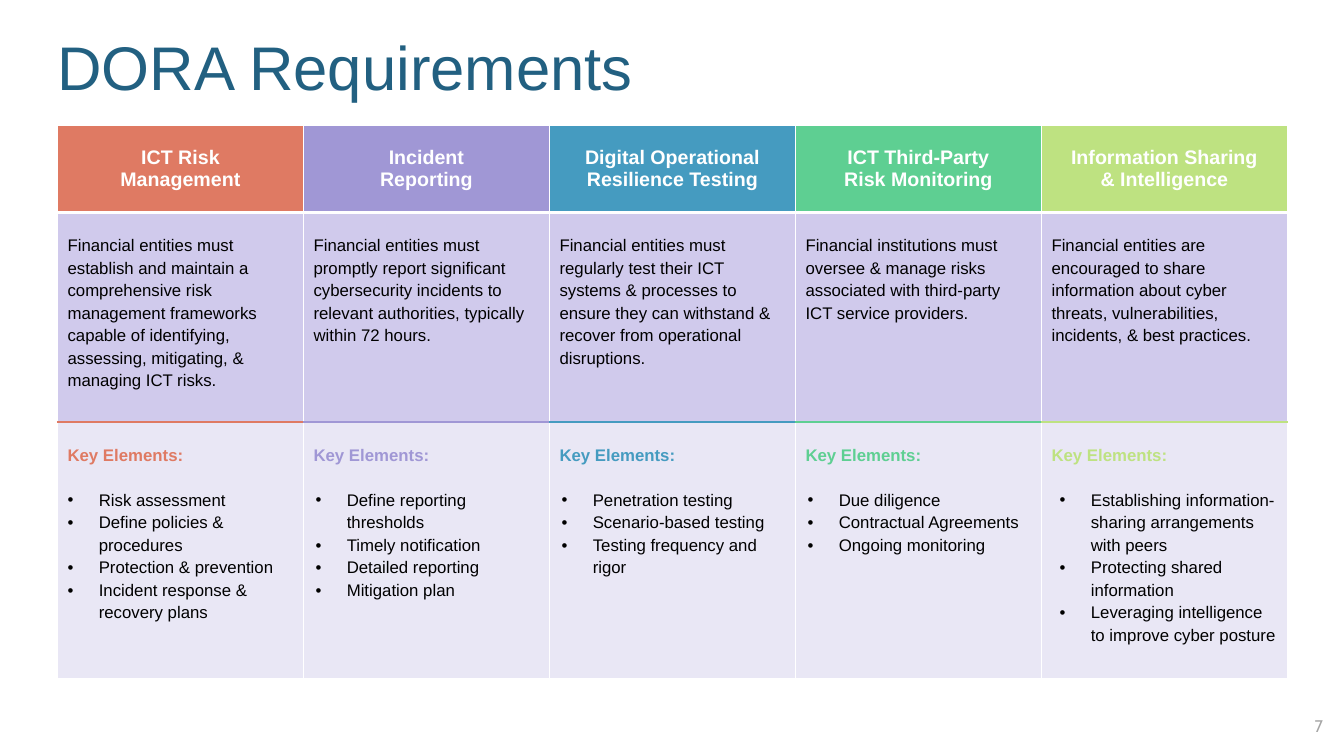
from dataclasses import dataclass

from lxml.etree import SubElement
from pptx import Presentation
from pptx.dml.color import RGBColor
from pptx.enum.text import MSO_ANCHOR, MSO_AUTO_SIZE, PP_ALIGN
from pptx.oxml import parse_xml
from pptx.oxml.ns import nsdecls, qn
from pptx.util import Inches, Pt


@dataclass(frozen=True)
class Theme:
    font: str = "Arial"
    number_font: str = "Cabin"
    title: str = "226081"
    number: str = "A5A5A5"
    white: str = "FFFFFF"
    black: str = "000000"
    summary_fill: str = "D0CAEC"
    elements_fill: str = "E9E7F5"
    title_size: int = 44
    header_size: int = 14
    body_size: int = 12


theme = Theme()

# header lines, colour, summary, bullet indent, key elements
pillars = [
    (["ICT Risk", "Management"], "DF7A63",
     "Financial entities must establish and maintain a comprehensive risk management "
     "frameworks capable of identifying, assessing, mitigating, & managing ICT risks.",
     0.31, ["Risk assessment", "Define policies & procedures",
            "Protection & prevention", "Incident response & recovery plans"]),
    (["Incident", "Reporting"], "A097D5",
     "Financial entities must promptly report significant cybersecurity incidents to "
     "relevant authorities, typically within 72 hours.",
     0.33, ["Define reporting thresholds", "Timely notification",
            "Detailed reporting", "Mitigation plan"]),
    (["Digital Operational Resilience Testing"], "459BC0",
     "Financial entities must regularly test their ICT systems & processes to ensure "
     "they can withstand & recover from operational disruptions.",
     0.33, ["Penetration testing", "Scenario-based testing", "Testing frequency and rigor"]),
    (["ICT Third-Party", "Risk Monitoring"], "5ECF92",
     "Financial institutions must oversee & manage risks associated with third-party "
     "ICT service providers.",
     0.33, ["Due diligence", "Contractual Agreements", "Ongoing monitoring"]),
    (["Information Sharing", "& Intelligence"], "BEE281",
     "Financial entities are encouraged to share information about cyber threats, "
     "vulnerabilities, incidents, & best practices.",
     0.39, ["Establishing information-sharing arrangements with peers",
            "Protecting shared information",
            "Leveraging intelligence to improve cyber posture"]),
]


def write(frame, text, size, color, bold=False, font=theme.font):
    """Add one paragraph, reusing the empty first one, and return it."""
    para = frame.paragraphs[0]
    if para.runs:
        para = frame.add_paragraph()
    span = para.add_run()
    span.text = text
    span.font.name = font
    span.font.size = Pt(size)
    span.font.bold = bold
    span.font.color.rgb = RGBColor.from_string(color)
    return para


def style_cell(cell, fill, top, bottom):
    """Fill the cell and draw its borders; top and bottom are (colour, points)."""
    cell.margin_left = cell.margin_right = Inches(0.1)
    cell.margin_top = cell.margin_bottom = Inches(0.2)
    cell.fill.solid()
    cell.fill.fore_color.rgb = RGBColor.from_string(fill)
    side = (theme.white, 1)
    borders = {"lnL": side, "lnR": side, "lnT": top, "lnB": bottom}
    for position, (tag, (color, points)) in enumerate(borders.items()):
        line = parse_xml(
            f'<a:{tag} {nsdecls("a")} w="{Pt(points)}"><a:solidFill>'
            f'<a:srgbClr val="{color}"/></a:solidFill></a:{tag}>')
        cell._tc.get_or_add_tcPr().insert(position, line)


deck = Presentation()
deck.slide_width, deck.slide_height = Inches(13.33), Inches(7.5)
page = deck.slides.add_slide(deck.slide_layouts[5])

title = page.shapes.title
title.left, title.top = Inches(0.47), Inches(0.17)
title.width, title.height = Inches(11.5), Inches(0.97)
title.text_frame.auto_size = MSO_AUTO_SIZE.NONE
title.text_frame.vertical_anchor = MSO_ANCHOR.MIDDLE
write(title.text_frame, "DORA Requirements", theme.title_size, theme.title).alignment = PP_ALIGN.LEFT

number = page.shapes.add_textbox(Inches(12.53), Inches(7), Inches(0.69), Inches(0.4))
number.text_frame.word_wrap = True
number.text_frame.vertical_anchor = MSO_ANCHOR.MIDDLE
write(number.text_frame, "7", theme.body_size, theme.number,
      font=theme.number_font).alignment = PP_ALIGN.RIGHT

row_heights = [0.86, 2.07, 2.55]
column_width = 2.44
table = page.shapes.add_table(
    len(row_heights), len(pillars), Inches(0.57), Inches(1.24),
    Inches(column_width * len(pillars)), Inches(sum(row_heights))).table
table.first_row = table.horz_banding = False
for row, height in zip(table.rows, row_heights):
    row.height = Inches(height)

thin, thick = (theme.white, 1), (theme.white, 3)
for index, (header_lines, color, summary, indent, elements) in enumerate(pillars):
    table.columns[index].width = Inches(column_width)
    header_cell, summary_cell, elements_cell = (table.cell(row, index) for row in range(3))
    divider = (color, 1)

    style_cell(header_cell, color, thin, thick)
    header_cell.vertical_anchor = MSO_ANCHOR.MIDDLE
    for line in header_lines:
        para = write(header_cell.text_frame, line, theme.header_size, theme.white, bold=True)
        para.alignment = PP_ALIGN.CENTER

    style_cell(summary_cell, theme.summary_fill, thick, divider)
    para = write(summary_cell.text_frame, summary, theme.body_size, theme.black)
    para.line_spacing = 1.2

    style_cell(elements_cell, theme.elements_fill, divider, thin)
    para = write(elements_cell.text_frame, "Key Elements:", theme.body_size, color, bold=True)
    para.line_spacing = 1.2
    para.space_after = Pt(16)
    for element in elements:
        para = write(elements_cell.text_frame, element, theme.body_size, theme.black)
        para.line_spacing = 1.2
        properties = para._p.get_or_add_pPr()
        properties.set("marL", str(Inches(indent)))
        properties.set("indent", str(Inches(-0.31)))
        bullet_color = SubElement(properties, qn("a:buClr"))
        SubElement(bullet_color, qn("a:srgbClr"), val=theme.black)
        SubElement(properties, qn("a:buFont"), typeface=theme.font)
        SubElement(properties, qn("a:buChar"), char="•")

deck.save("out.pptx")
